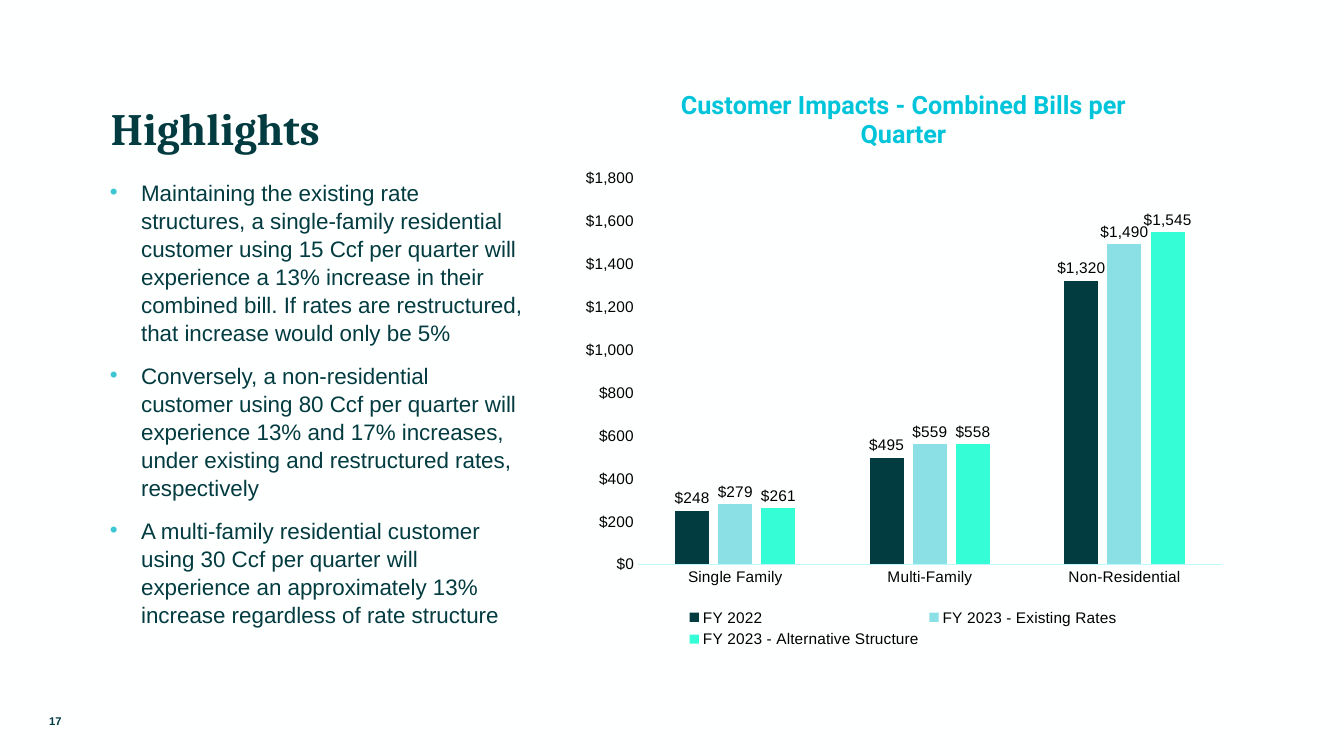
from lxml.etree import SubElement as Sub
from pptx import Presentation
from pptx.chart.data import CategoryChartData as ChartData
from pptx.dml.color import RGBColor as Rgb
from pptx.enum.chart import XL_CHART_TYPE as Kind
from pptx.enum.chart import XL_LABEL_POSITION as Spot
from pptx.enum.chart import XL_LEGEND_POSITION as Side
from pptx.enum.chart import XL_TICK_MARK as Tick
from pptx.enum.text import MSO_ANCHOR as Anchor
from pptx.enum.text import MSO_AUTO_SIZE as Fit
from pptx.enum.text import PP_ALIGN as Align
from pptx.oxml.ns import qn
from pptx.util import Emu, Pt

PX = 9144  # 100 px to the inch
HUES = {"back": "FEFFFF", "ink": "023B40", "black": "000000", "head": "00C4D9",
        "dot": "3EC6D3", "axis": "BEF8FD", "pale": "8BE0E6", "mint": "35FDD6"}
MONEY = '"$"#,##0'
POINTS = [
    "Maintaining the existing rate structures, a single-family residential "
    "customer using 15 Ccf per quarter will experience a 13% increase in their "
    "combined bill. If rates are restructured, that increase would only be 5%",
    "Conversely, a non-residential customer using 80 Ccf per quarter will "
    "experience 13% and 17% increases, under existing and restructured rates, "
    "respectively",
    "A multi-family residential customer using 30 Ccf per quarter will "
    "experience an approximately 13% increase regardless of rate structure",
]
GROUPS = ["Single Family", "Multi-Family", "Non-Residential"]
BILLS = [
    ("FY 2022", (248, 495, 1320), "ink"),
    ("FY 2023 - Existing Rates", (279, 559, 1490), "pale"),
    ("FY 2023 - Alternative Structure", (261, 558, 1545), "mint"),
]


def px(*nums):
    return [Emu(num * PX) for num in nums]


def hue(name):
    return Rgb.from_string(HUES[name])


def style(font, size, tint="ink", face="Arial", bold=False):
    font.name, font.size, font.bold = face, Pt(size), bold
    font.color.rgb = hue(tint)


def pad(frame, top=0):
    frame.word_wrap = True
    frame.auto_size = Fit.NONE
    frame.margin_left = frame.margin_right = frame.margin_bottom = 0
    frame.margin_top = Emu(top * PX)


def add_title(slide, text, box):
    title = slide.shapes.title
    title.left, title.top, title.width, title.height = px(*box)
    frame = title.text_frame
    pad(frame, 21)
    frame.vertical_anchor = Anchor.BOTTOM
    frame.text = text
    para = frame.paragraphs[0]
    para.alignment = Align.LEFT
    style(para.runs[0].font, 32, face="Cambria", bold=True)


def add_dot(para):
    props = para._p.get_or_add_pPr()
    props.set("marL", str(31 * PX))
    props.set("indent", str(-31 * PX))
    tint = Sub(props, qn("a:buClr"))
    Sub(tint, qn("a:srgbClr"), val=HUES["dot"])
    Sub(props, qn("a:buFont"), typeface="Arial")
    Sub(props, qn("a:buChar"), char="•")


def add_list(slide, items, box):
    frame = slide.shapes.add_textbox(*px(*box)).text_frame
    pad(frame)
    frame.text = "\n".join(items)
    for para in frame.paragraphs:
        para.line_spacing = 1.05
        para.space_before = Pt(10)
        add_dot(para)
        style(para.runs[0].font, 16)


def add_page(slide, text, box):
    frame = slide.shapes.add_textbox(*px(*box)).text_frame
    frame.word_wrap = True
    frame.vertical_anchor = Anchor.MIDDLE
    frame.text = text
    para = frame.paragraphs[0]
    para.alignment = Align.CENTER
    para.space_after = Pt(6)
    style(para.runs[0].font, 8, bold=True)


def set_plot(chart, **area):
    """Fix the inner plot area, in fractions of the chart."""
    plot = chart._chartSpace.chart.plotArea
    old = plot.find(qn("c:layout"))
    if old is not None:
        plot.remove(old)
    layout = Sub(plot, qn("c:layout"))
    plot.insert(0, layout)
    manual = Sub(layout, qn("c:manualLayout"))
    parts = {"layoutTarget": "inner", "xMode": "edge", "yMode": "edge", **area}
    for tag, val in parts.items():
        Sub(manual, qn("c:" + tag), val=str(val))


def set_axes(chart):
    for axis in (chart.category_axis, chart.value_axis):
        axis.major_tick_mark = axis.minor_tick_mark = Tick.NONE
        axis.has_major_gridlines = False
        style(axis.tick_labels.font, 11, "black")
    line = chart.category_axis.format.line
    line.color.rgb, line.width = hue("axis"), Pt(0.75)
    value = chart.value_axis
    value.format.line.fill.background()
    value.minimum_scale, value.maximum_scale, value.major_unit = 0, 1800, 200
    value.tick_labels.number_format = MONEY
    value.tick_labels.number_format_is_linked = False


def set_bars(plot):
    plot.gap_width, plot.overlap = 219, -27
    plot.vary_by_categories = False
    for bars, (_, _, tint) in zip(plot.series, BILLS):
        bars.format.fill.solid()
        bars.format.fill.fore_color.rgb = hue(tint)
        labels = bars.data_labels
        labels.show_value = True
        labels.position = Spot.OUTSIDE_END
        labels.number_format = MONEY
        labels.number_format_is_linked = False
        style(labels.font, 11, "black")


def add_bars(slide, title, box):
    data = ChartData(number_format=MONEY)
    data.categories = GROUPS
    for name, vals, _ in BILLS:
        data.add_series(name, vals)
    chart = slide.shapes.add_chart(Kind.COLUMN_CLUSTERED, *px(*box), data).chart
    style(chart.font, 10)
    chart.has_title = True
    frame = chart.chart_title.text_frame
    frame.text = title
    style(frame.paragraphs[0].runs[0].font, 18, "head", "Roboto", True)
    chart.chart_title.include_in_layout = False
    chart.has_legend = True
    chart.legend.position = Side.BOTTOM
    chart.legend.include_in_layout = False
    style(chart.legend.font, 11, "black")
    set_axes(chart)
    set_bars(chart.plots[0])
    set_plot(chart, x=0.1, y=0.19, w=0.88, h=0.66)


def main():
    deck = Presentation()
    deck.slide_width, deck.slide_height = px(1333, 750)
    slide = deck.slides.add_slide(deck.slide_layouts[5])
    slide.background.fill.solid()
    slide.background.fill.fore_color.rgb = hue("back")
    add_title(slide, "Highlights", (110, 19, 413, 134))
    add_list(slide, POINTS, (109, 176, 413, 470))
    add_page(slide, "17", (0, 695, 110, 40))
    add_bars(slide, "Customer Impacts - Combined Bills per Quarter",
             (567, 66, 658, 581))
    deck.save("out.pptx")


if __name__ == "__main__":
    main()
